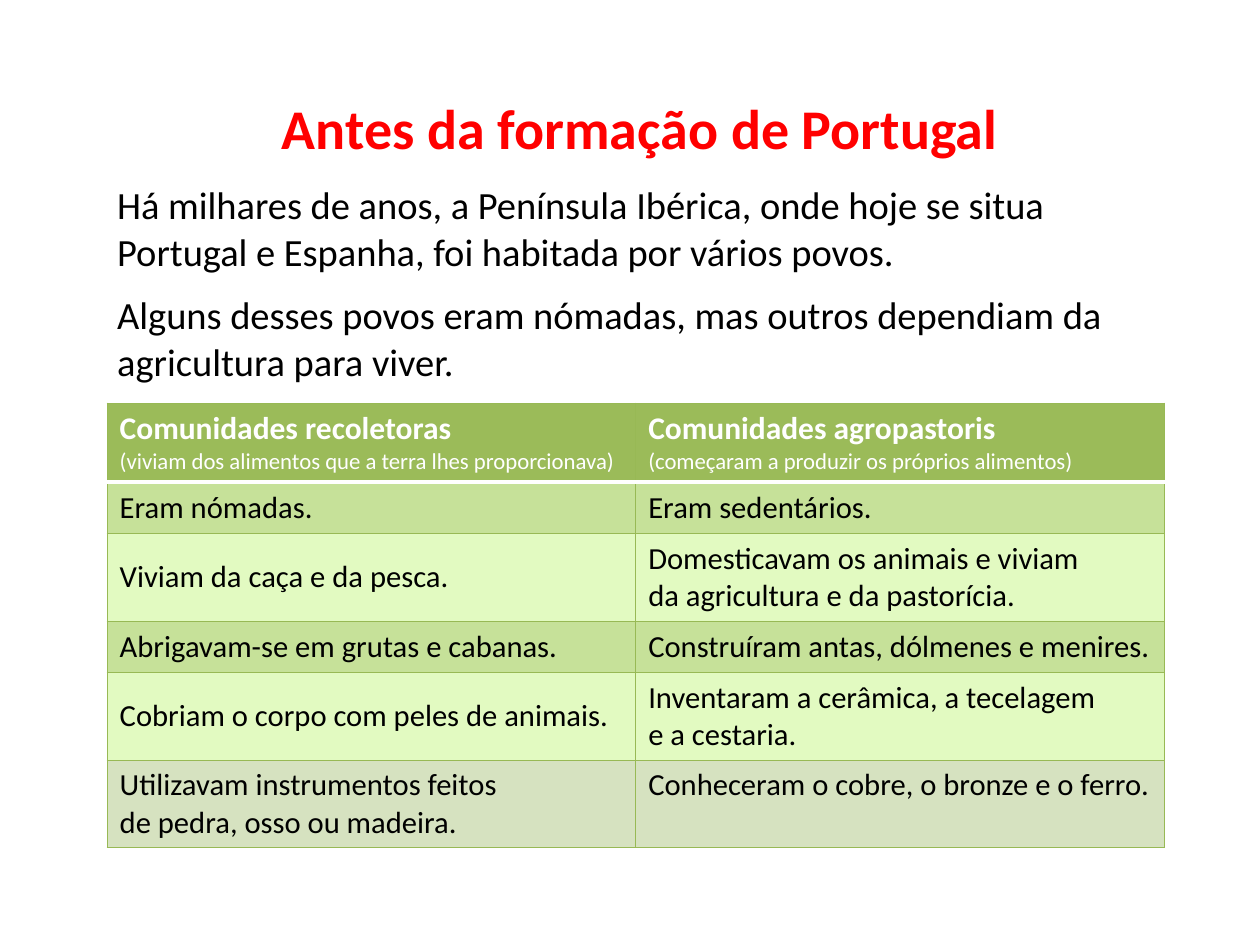
from lxml.etree import SubElement
from pptx import Presentation
from pptx.dml.color import RGBColor
from pptx.enum.text import MSO_ANCHOR as Anchor, MSO_AUTO_SIZE as AutoSize, PP_ALIGN as Align
from pptx.oxml.ns import qn
from pptx.util import Inches, Pt

COLORS = {
    "title": "FF0000",
    "text": "000000",
    "white": "FFFFFF",
    "header": "9BBB59",
    "band": "C6E199",
    "plain": "E2FAC1",
    "last": "D6E2C0",
    "border": "98B955",
}

TITLE = "Antes da formação de Portugal"
INTRO = [
    "Há milhares de anos, a Península Ibérica, onde hoje se situa Portugal e Espanha, "
    "foi habitada por vários povos.",
    "Alguns desses povos eram nómadas, mas outros dependiam da agricultura para viver.",
]
COMMUNITIES = [
    ["Comunidades recoletoras\n(viviam dos alimentos que a terra lhes proporcionava)",
     "Comunidades agropastoris\n(começaram a produzir os próprios alimentos)"],
    ["Eram nómadas.", "Eram sedentários."],
    ["Viviam da caça e da pesca.",
     "Domesticavam os animais e viviam\nda agricultura e da pastorícia."],
    ["Abrigavam-se em grutas e cabanas.", "Construíram antas, dólmenes e menires."],
    ["Cobriam o corpo com peles de animais.",
     "Inventaram a cerâmica, a tecelagem\ne a cestaria."],
    ["Utilizavam instrumentos feitos\nde pedra, osso ou madeira.",
     "Conheceram o cobre, o bronze e o ferro."],
]
ROW_FILLS = ["header", "band", "plain", "band", "plain", "last"]
ROW_HEIGHTS = [0.62, 0.41, 0.68, 0.41, 0.68, 0.68]


class SlideBuilder:
    font_name = "Calibri"

    def __init__(self, page):
        self.page = page

    def style(self, para, size, color, bold=False):
        font = para.font
        font.name, font.size, font.bold = self.font_name, Pt(size), bold
        font.color.rgb = RGBColor.from_string(COLORS[color])

    def place(self, box, left, top, width, height):
        box.left, box.top = Inches(left), Inches(top)
        box.width, box.height = Inches(width), Inches(height)
        box.text_frame.word_wrap = True
        box.text_frame.auto_size = AutoSize.NONE

    def title(self, text, *bounds):
        box = self.page.shapes.title
        self.place(box, *bounds)
        box.text_frame.text = text
        para = box.text_frame.paragraphs[0]
        para.alignment = Align.CENTER
        self.style(para, 32, "title", bold=True)

    def body(self, texts, *bounds):
        box = self.page.placeholders[1]
        self.place(box, *bounds)
        box.text_frame.text = "\n".join(texts)
        for index, para in enumerate(box.text_frame.paragraphs):
            properties = para._p.get_or_add_pPr()
            properties.set("marL", "0")
            properties.set("indent", "0")
            SubElement(properties, qn("a:buNone"))
            para.space_before = Pt(10 if index else 0)
            self.style(para, 22, "text")

    def border(self, cell, side, color, width):
        line = SubElement(cell._tc.get_or_add_tcPr(), qn(f"a:ln{side}"), w=str(Pt(width)))
        fill = SubElement(line, qn("a:solidFill"))
        SubElement(fill, qn("a:srgbClr"), val=COLORS[color])

    def cell(self, cell, text, row, fill):
        """Borders go in before the fill, as the schema orders them."""
        header_edge = {0: "B", 1: "T"}.get(row)
        for side in "LRTB":
            if side == header_edge:
                self.border(cell, side, "white", 2)
            else:
                self.border(cell, side, "border", 0.75)
        cell.fill.solid()
        cell.fill.fore_color.rgb = RGBColor.from_string(COLORS[fill])
        cell.vertical_anchor = Anchor.TOP if fill in ("header", "last") else Anchor.MIDDLE
        cell.text = text
        for index, para in enumerate(cell.text_frame.paragraphs):
            if row:
                self.style(para, 17.5, "text")
            elif index:
                self.style(para, 13, "white")
            else:
                self.style(para, 18, "white", bold=True)

    def table(self, rows, fills, heights, left, top, width):
        frame = self.page.shapes.add_table(
            len(rows), len(rows[0]), Inches(left), Inches(top),
            Inches(width), Inches(sum(heights)))
        table = frame.table
        for row, (texts, fill, height) in enumerate(zip(rows, fills, heights)):
            table.rows[row].height = Inches(height)
            for column, text in enumerate(texts):
                self.cell(table.cell(row, column), text, row, fill)


def main():
    deck = Presentation()
    deck.slide_width, deck.slide_height = Inches(10), Inches(7.5)
    builder = SlideBuilder(deck.slides.add_slide(deck.slide_layouts[1]))
    builder.title(TITLE, 1.46, 0.69, 7.24, 0.64)
    builder.body(INTRO, 0.83, 1.39, 8.5, 1.72)
    builder.table(COMMUNITIES, ROW_FILLS, ROW_HEIGHTS, 0.85, 3.2, 8.39)
    deck.save("out.pptx")


if __name__ == "__main__":
    main()
